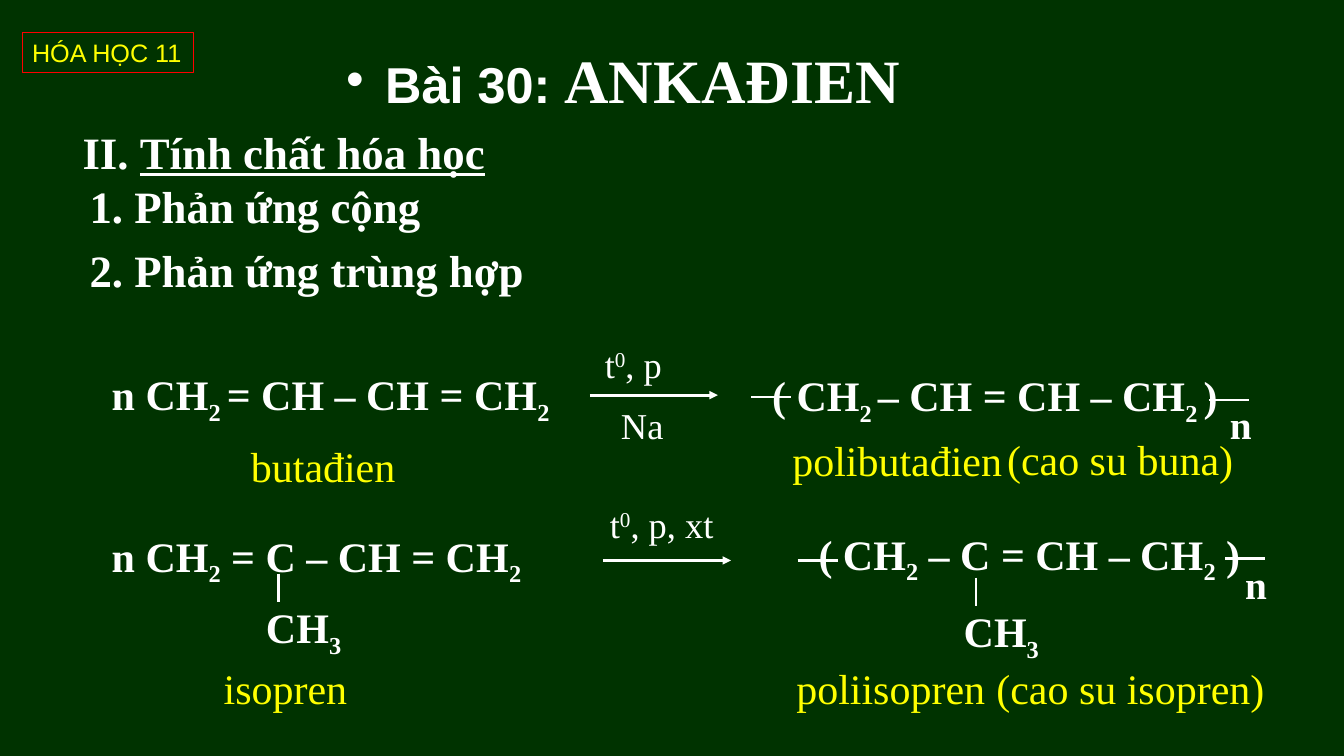
import pptx
import pptx.util
import pptx.dml.color
import pptx.enum.shapes
import pptx.enum.text
import pptx.oxml
import pptx.oxml.ns

RGBColor = pptx.dml.color.RGBColor
Inches = pptx.util.Inches
Pt = pptx.util.Pt

BOARD = RGBColor(0x00, 0x33, 0x00)
CHALK = RGBColor(0xFF, 0xFF, 0xFF)
YELLOW = RGBColor(0xFF, 0xFF, 0x00)
RED = RGBColor(0xFF, 0x00, 0x00)
SERIF, SANS = "Times New Roman", "Arial"

LESSON = [("Bài 30: ", SANS, 36), ("ANKAĐIEN", SERIF, 44)]
SUBJECT = "HÓA HỌC 11"

# Every second part between bars takes the style's accent.
# Style: size, bold, colour, accent
STYLES = {
    "heading": (32, True, CHALK, "underline"),
    "formula": (30, True, CHALK, "-25000"),
    "condition": (26, False, CHALK, "30000"),
    "count": (28, True, CHALK, None),
    "name": (30, False, YELLOW, None),
}

# Style, left, top, width, text
TEXTS = [
    ("heading", 0.72, 1.19, 5.09, "II. |Tính chất hóa học"),
    ("heading", 0.79, 1.72, 4.14, "1. Phản ứng cộng"),
    ("heading", 0.79, 2.36, 4.79, "2. Phản ứng trùng hợp"),
    ("formula", 1.01, 3.61, 4.8, "n CH|2 |= CH – CH = CH|2"),
    ("condition", 5.81, 3.34, 1.59, " t|0|, p"),
    ("condition", 5.97, 3.95, 1.59, " Na"),
    ("formula", 7.56, 3.62, 5.08, "( CH|2 |– CH = CH – CH|2 |)"),
    ("count", 12.1, 3.92, 0.59, "n"),
    ("name", 2.39, 4.32, 2.04, "butađien"),
    ("name", 7.76, 4.26, 3.36, "polibutađien"),
    ("name", 9.89, 4.25, 3.44, "(cao su buna)"),
    ("formula", 1.01, 5.21, 4.8, "n CH|2| = C – CH = CH|2"),
    ("formula", 2.54, 5.92, 1.9, "CH|3"),
    ("condition", 5.86, 4.93, 1.59, " t|0|, p, xt"),
    ("formula", 8.02, 5.19, 4.46, "( CH|2| – C = CH – CH|2| )"),
    ("formula", 9.46, 5.96, 1.6, "CH|3"),
    ("count", 12.25, 5.51, 0.59, "n"),
    ("name", 2.12, 6.52, 1.49, "isopren"),
    ("name", 7.8, 6.52, 3.54, "poliisopren"),
    ("name", 9.68, 6.52, 3.7, " (cao su isopren)"),
]

# Kind: run across, run down, line width, has arrowhead
LINE_KINDS = {
    "arrow": (1.27, 0, 2, True),
    "branch": (0, 0.28, 2, False),
    "thin dash": (0.4, 0, 1.5, False),
    "thick dash": (0.4, 0, 2.25, False),
}
# Kind, start x, start y
LINES = [
    ("arrow", 5.85, 3.92), ("arrow", 5.98, 5.56),
    ("branch", 2.76, 5.69), ("branch", 9.68, 5.73),
    ("thin dash", 7.45, 3.94), ("thin dash", 11.99, 3.97),
    ("thick dash", 7.91, 5.56), ("thick dash", 12.15, 5.54),
]


def add_span(para, text, font, size, bold, color):
    span = para.add_run()
    span.text = text
    span.font.name, span.font.size, span.font.bold = font, Pt(size), bold
    span.font.color.rgb = color
    return span


def add_text(page, style, left, top, width, text):
    size, bold, color, accent = STYLES[style]
    height = 1.2 * size / 72 + 0.1
    box = page.shapes.add_textbox(*map(Inches, (left, top, width, height)))
    frame = box.text_frame
    frame.word_wrap = True
    frame.auto_size = pptx.enum.text.MSO_AUTO_SIZE.SHAPE_TO_FIT_TEXT
    for index, part in enumerate(text.split("|")):
        span = add_span(frame.paragraphs[0], part, SERIF, size, bold, color)
        if index % 2 and accent == "underline":
            span.font.underline = True
        elif index % 2:
            span.font._element.set("baseline", accent)


def add_line(page, kind, x, y):
    across, down, width, has_head = LINE_KINDS[kind]
    line = page.shapes.add_connector(
        pptx.enum.shapes.MSO_CONNECTOR.STRAIGHT,
        *map(Inches, (x, y, x + across, y + down)))
    line.line.color.rgb = CHALK
    line.line.width = Pt(width)
    if has_head:
        head = pptx.oxml.ns.qn("a:tailEnd")
        line.line._get_or_add_ln().append(
            line._element.makeelement(head, {"type": "triangle"}))
    effects = pptx.oxml.ns.qn("a:effectLst")
    line._element.spPr.append(line._element.makeelement(effects, {}))


def format_title(title):
    title.left, title.top, title.width, title.height = map(
        Inches, (3.34, 0.37, 5.73, 0.84))
    frame = title.text_frame
    frame.word_wrap = False
    frame.auto_size = pptx.enum.text.MSO_AUTO_SIZE.NONE
    frame.vertical_anchor = pptx.enum.text.MSO_ANCHOR.TOP
    para = frame.paragraphs[0]
    para.alignment = pptx.enum.text.PP_ALIGN.LEFT
    for text, font, size in LESSON:
        add_span(para, text, font, size, True, CHALK)
    props = para._p.get_or_add_pPr()
    props.set("marL", str(Inches(0.38)))
    props.set("indent", str(Inches(-0.38)))
    space = pptx.oxml.ns.nsdecls("a")
    for markup in (f'<a:spcBef {space}><a:spcPct val="20000"/></a:spcBef>',
                   f'<a:buFont {space} typeface="{SANS}"/>',
                   f'<a:buChar {space} char="•"/>'):
        props.append(pptx.oxml.parse_xml(markup))


def add_subject(page):
    badge = page.shapes.add_shape(
        pptx.enum.shapes.MSO_SHAPE.RECTANGLE,
        *map(Inches, (0.22, 0.32, 1.7, 0.4)))
    badge.shadow.inherit = False
    badge.fill.background()
    badge.line.color.rgb = RED
    badge.line.width = Pt(0.75)
    badge.text_frame.word_wrap = False
    para = badge.text_frame.paragraphs[0]
    para.alignment = pptx.enum.text.PP_ALIGN.LEFT
    add_span(para, SUBJECT, SANS, 18, False, YELLOW)


def main():
    deck = pptx.Presentation()
    deck.slide_width, deck.slide_height = Inches(13.33), Inches(7.5)
    page = deck.slides.add_slide(deck.slide_layouts[5])
    page.background.fill.solid()
    page.background.fill.fore_color.rgb = BOARD
    add_subject(page)
    format_title(page.shapes.title)
    for text in TEXTS:
        add_text(page, *text)
    for line in LINES:
        add_line(page, *line)
    deck.save("out.pptx")


if __name__ == "__main__":
    main()
